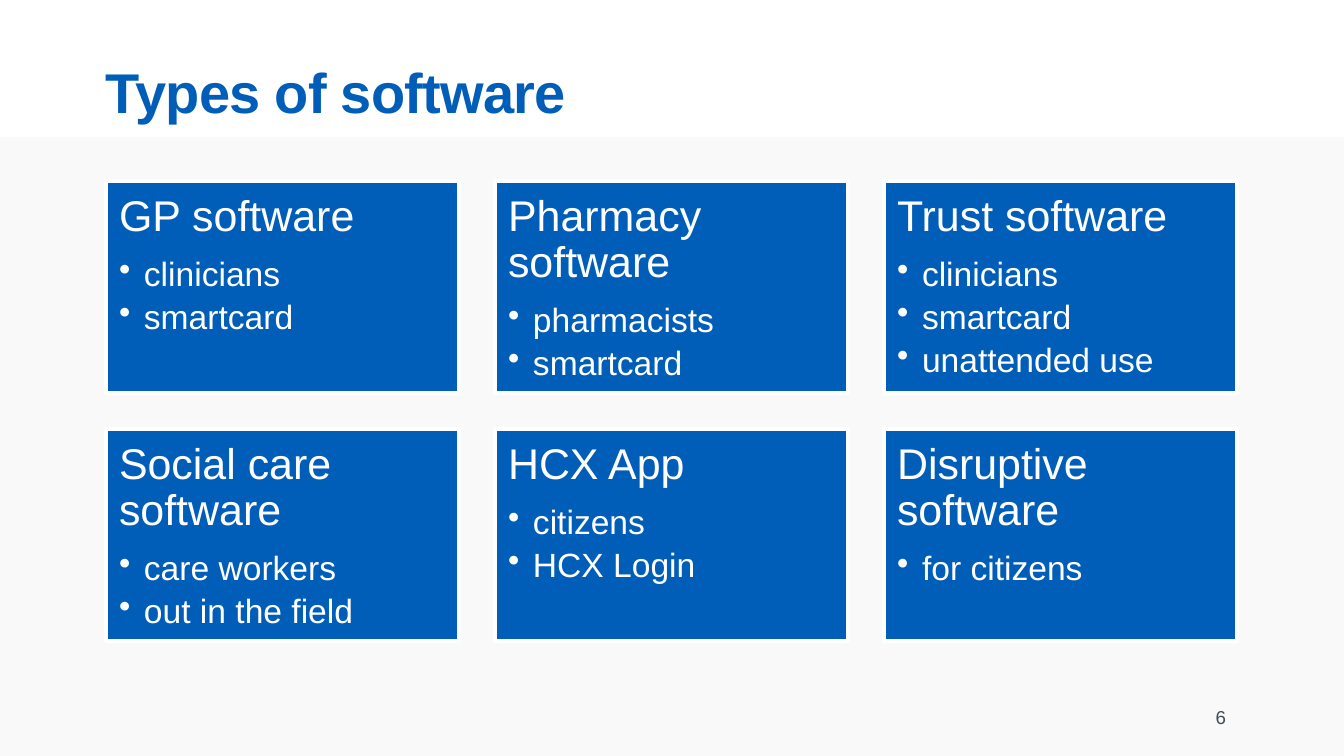
"""Build the "Types of software" slide: a title above a grid of six cards."""
from typing import NamedTuple

from lxml.etree import SubElement
from pptx import Presentation
from pptx.dml.color import RGBColor
from pptx.enum.shapes import MSO_SHAPE
from pptx.enum.text import MSO_ANCHOR, PP_ALIGN
from pptx.oxml.ns import qn
from pptx.util import Emu, Pt

EMU_PER_PX = 914400 / 134.4
FONT = "Arial"
COLORS = {"blue": "005EB8", "panel": "F9F9F9", "white": "FFFFFF", "grey": "424D58"}
COLUMNS = 3
CARD_LEFT, CARD_TOP = 106, 181
CARD_WIDTH, CARD_HEIGHT = 353, 212
COLUMN_STEP, ROW_STEP = 389, 248
BULLET_INDENT = 25


class Box(NamedTuple):
    left: int
    top: int
    width: int
    height: int


class Card(NamedTuple):
    heading: str
    bullets: tuple[str, ...]


CARDS = (
    Card("GP software", ("clinicians", "smartcard")),
    Card("Pharmacy software", ("pharmacists", "smartcard")),
    Card("Trust software", ("clinicians", "smartcard", "unattended use")),
    Card("Social care software", ("care workers", "out in the field")),
    Card("HCX App", ("citizens", "HCX Login")),
    Card("Disruptive software", ("for citizens",)),
)


def px(n: int) -> Emu:
    return Emu(round(n * EMU_PER_PX))


def color(name: str) -> RGBColor:
    return RGBColor.from_string(COLORS[name])


def add_run(p, text: str, size: int, fill: str, bold: bool = False):
    r = p.add_run()
    r.text = text
    r.font.name = FONT
    r.font.size = Pt(size)
    r.font.bold = bold
    r.font.color.rgb = color(fill)
    return r


def add_rect(s, box: Box, fill: str):
    sp = s.shapes.add_shape(MSO_SHAPE.RECTANGLE, *map(px, box))
    sp.shadow.inherit = False
    sp.fill.solid()
    sp.fill.fore_color.rgb = color(fill)
    sp.line.fill.background()
    return sp


def set_frame(tf, inset: int, anchor: MSO_ANCHOR) -> None:
    tf.word_wrap = True
    tf.vertical_anchor = anchor
    tf.margin_left = tf.margin_right = px(inset)
    tf.margin_top = tf.margin_bottom = px(inset)


def add_label(s, box: Box):
    tf = s.shapes.add_textbox(*map(px, box)).text_frame
    set_frame(tf, 0, MSO_ANCHOR.MIDDLE)
    return tf.paragraphs[0]


def style_paragraph(p, space_after: float) -> None:
    p.alignment = PP_ALIGN.LEFT
    p.line_spacing = 0.9
    p.space_after = Pt(space_after)


def add_bullet(tf, text: str) -> None:
    p = tf.add_paragraph()
    p.level = 1
    style_paragraph(p, 3.6)
    pPr = p._p.get_or_add_pPr()
    pPr.set("marL", str(px(BULLET_INDENT)))
    pPr.set("indent", str(px(-BULLET_INDENT)))
    SubElement(pPr, qn("a:buChar"), char="•")
    add_run(p, text, 18, "white")


def add_card(s, box: Box, card: Card) -> None:
    sp = add_rect(s, box, "blue")
    sp.line.color.rgb = color("white")
    sp.line.width = Pt(2)
    tf = sp.text_frame
    set_frame(tf, 13, MSO_ANCHOR.TOP)
    p = tf.paragraphs[0]
    style_paragraph(p, 9)
    add_run(p, card.heading, 23, "white")
    for text in card.bullets:
        add_bullet(tf, text)


def main() -> None:
    prs = Presentation()
    prs.slide_width, prs.slide_height = px(1344), px(756)
    s = prs.slides.add_slide(prs.slide_layouts[6])

    add_rect(s, Box(0, 137, 1344, 619), "panel")
    title = add_run(add_label(s, Box(106, 52, 1122, 78)), "Types of software", 30, "blue", True)
    title._r.get_or_add_rPr().set("spc", "-40")

    for i, card in enumerate(CARDS):
        row, column = divmod(i, COLUMNS)
        left = CARD_LEFT + column * COLUMN_STEP
        top = CARD_TOP + row * ROW_STEP
        add_card(s, Box(left, top, CARD_WIDTH, CARD_HEIGHT), card)

    p = add_label(s, Box(926, 697, 300, 40))
    p.alignment = PP_ALIGN.RIGHT
    add_run(p, "6", 10, "grey")
    prs.save("out.pptx")


if __name__ == "__main__":
    main()
